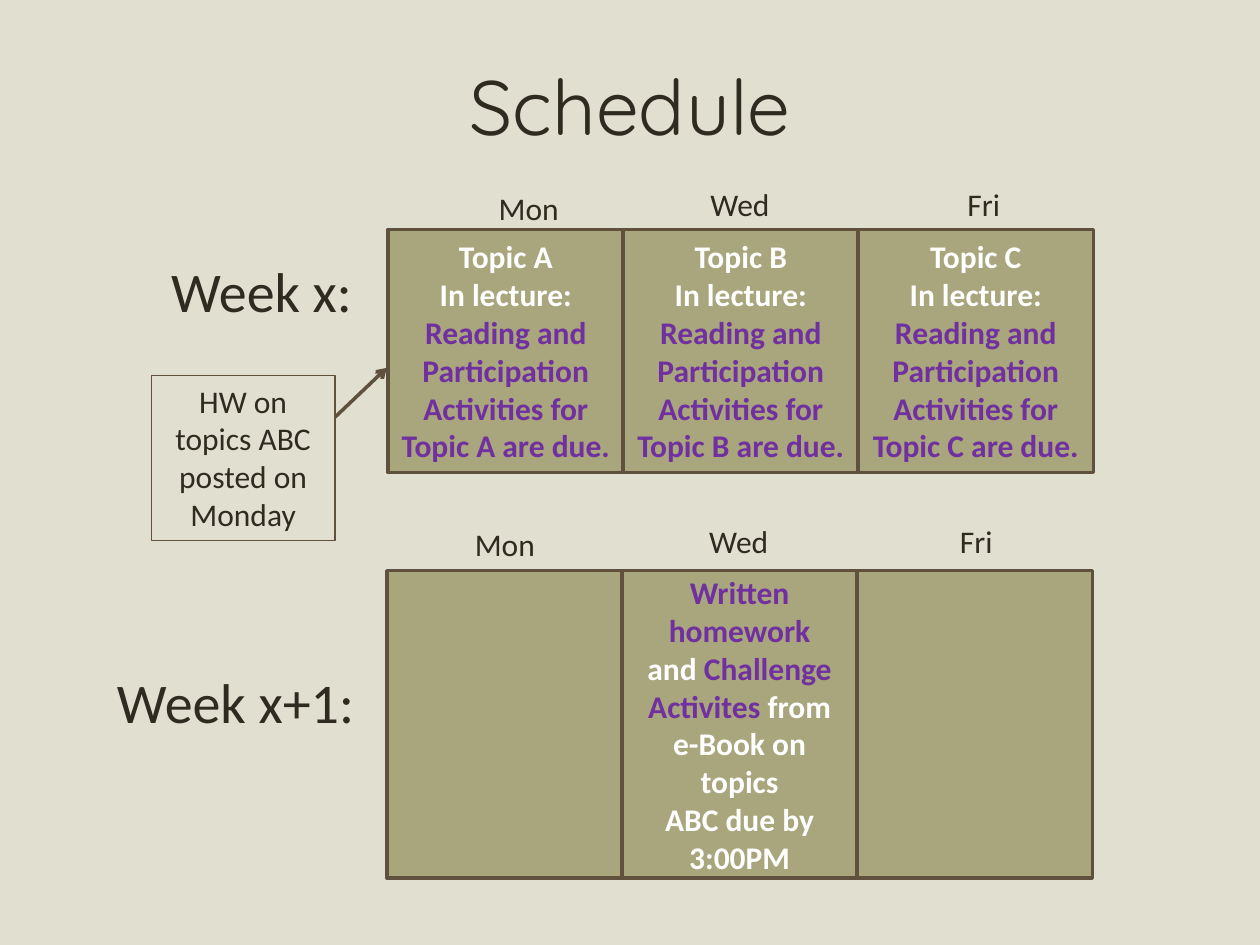
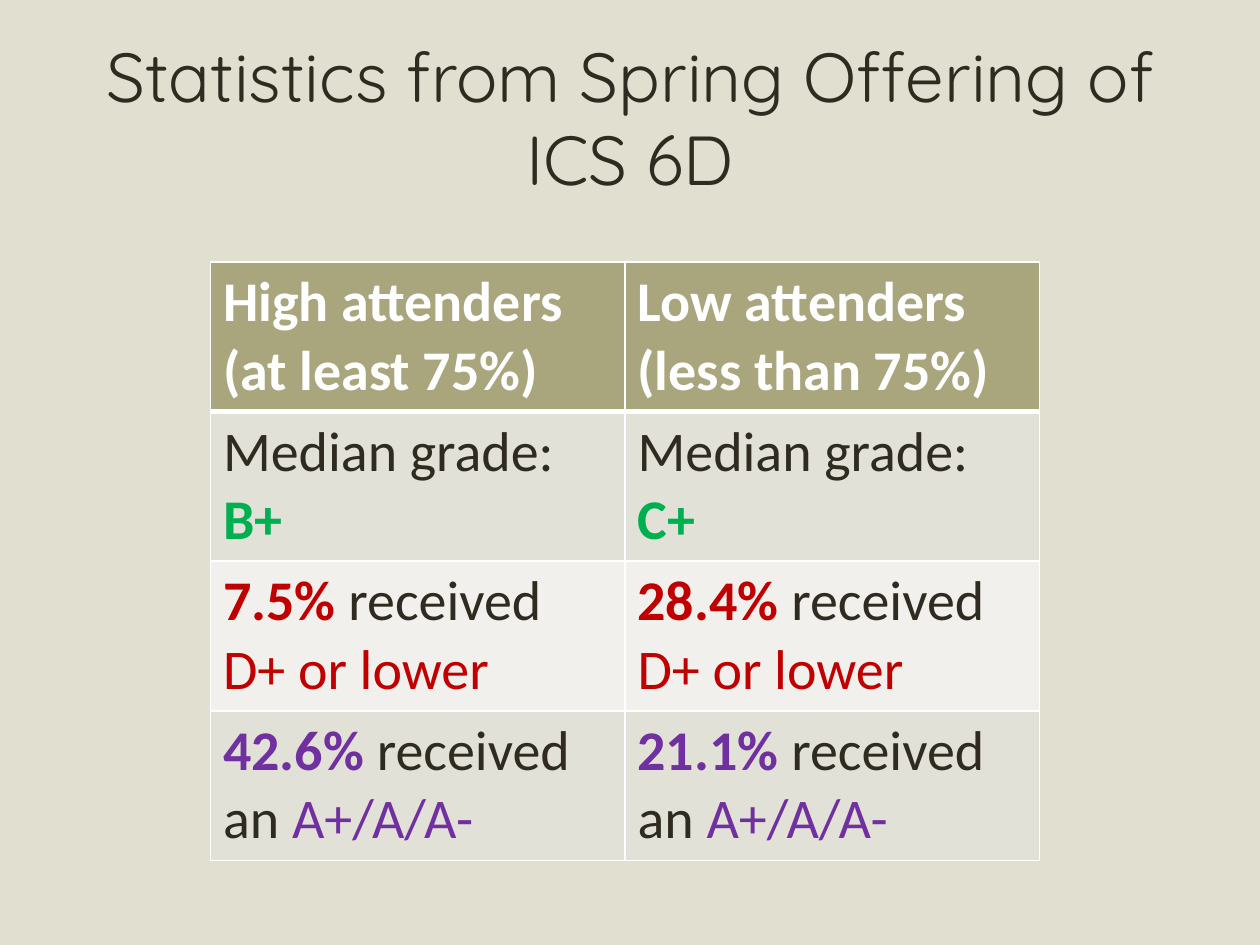
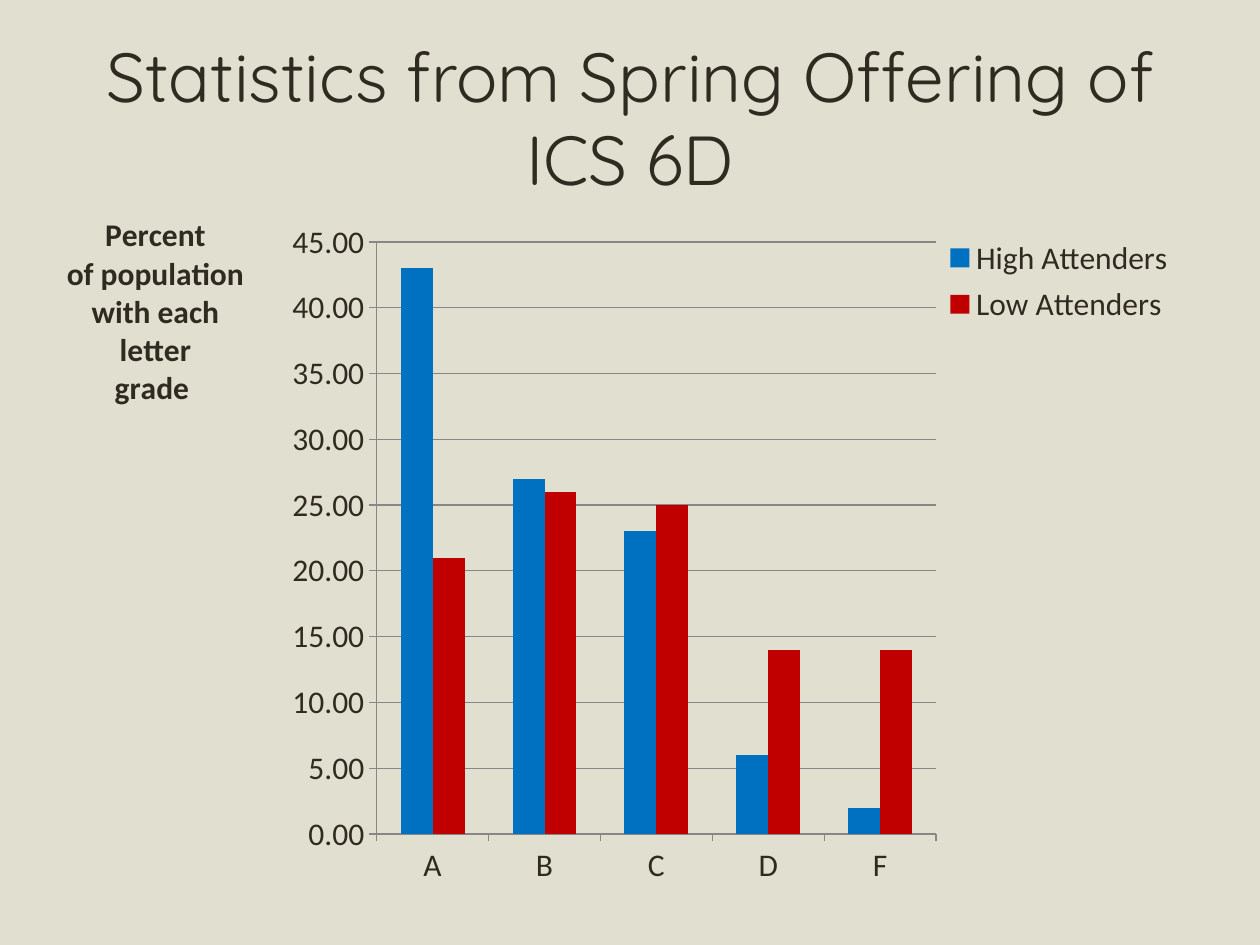
from dataclasses import dataclass
from typing import NamedTuple

from lxml.etree import SubElement
from pptx import Presentation
from pptx.chart.data import CategoryChartData
from pptx.dml.color import RGBColor
from pptx.enum.chart import XL_CHART_TYPE as ChartType
from pptx.enum.chart import XL_LEGEND_POSITION as LegendPosition
from pptx.enum.chart import XL_TICK_MARK as TickMark
from pptx.enum.shapes import MSO_CONNECTOR as ConnectorType
from pptx.enum.shapes import MSO_SHAPE as ShapeType
from pptx.enum.text import MSO_ANCHOR as Anchor
from pptx.enum.text import MSO_AUTO_SIZE as AutoSize
from pptx.enum.text import PP_ALIGN as Align
from pptx.oxml import parse_xml
from pptx.oxml.ns import nsdecls, qn
from pptx.oxml.xmlchemy import BaseOxmlElement
from pptx.slide import Slide
from pptx.table import _Cell as Cell
from pptx.text.text import Font, TextFrame
from pptx.util import Inches, Pt


@dataclass(frozen=True)
class Theme:
    background: str = "E0DFD0"
    ink: str = "2F2B20"
    olive: str = "A9A57C"
    brown: str = "5F513E"
    white: str = "FFFFFF"
    purple: str = "7030A0"
    green: str = "00B050"
    red: str = "C00000"
    blue: str = "0070C0"
    gray: str = "878787"
    band_dark: str = "E2E1D7"
    band_light: str = "F1F0EC"
    title_font: str = "Quicksand"
    body_font: str = "Calibri"
    title_size: float = 44
    long_title_size: float = 39.6
    large_size: float = 32
    body_size: float = 18


THEME = Theme()


class Span(NamedTuple):
    text: str
    color: str = THEME.ink
    bold: bool = False


class Box(NamedTuple):
    left: float
    top: float
    width: float
    height: float

    def lengths(self) -> list[Inches]:
        return [Inches(value) for value in self]


class Label(NamedTuple):
    text: str
    box: Box
    size: float = THEME.body_size


Paragraphs = list[list[Span]]


class Week(NamedTuple):
    first_day: Box
    span: float
    labels: list[Label]
    days: list[Paragraphs]


class Grades(NamedTuple):
    attenders: str
    color: str
    percents: list[int]


def rgb(color: str) -> RGBColor:
    return RGBColor.from_string(color)


def style_font(font: Font, size: float, color: str, bold: bool = False,
               name: str = THEME.body_font) -> None:
    font.name, font.size, font.bold = name, Pt(size), bold
    font.color.rgb = rgb(color)


def write(frame: TextFrame, paragraphs: Paragraphs, size: float,
          align: Align = Align.LEFT) -> None:
    for index, spans in enumerate(paragraphs):
        paragraph = frame.add_paragraph() if index else frame.paragraphs[0]
        paragraph.alignment = align
        for span in spans:
            run = paragraph.add_run()
            run.text = span.text
            style_font(run.font, size, span.color, span.bold)


def add_titled_slide(deck: Presentation, heading: str, top: float, size: float) -> Slide:
    slide = deck.slides.add_slide(deck.slide_layouts[5])
    title = slide.shapes.title
    title.left, title.top, title.width, title.height = Box(0.5, top, 9, 1.25).lengths()
    frame = title.text_frame
    frame.text = heading
    frame.auto_size = AutoSize.NONE
    frame.vertical_anchor = Anchor.MIDDLE
    frame.paragraphs[0].alignment = Align.CENTER
    style_font(frame.paragraphs[0].runs[0].font, size, THEME.ink, name=THEME.title_font)
    return slide


def add_label(slide: Slide, label: Label) -> None:
    frame = slide.shapes.add_textbox(*label.box.lengths()).text_frame
    frame.word_wrap = False
    frame.auto_size = AutoSize.SHAPE_TO_FIT_TEXT
    write(frame, [[Span(label.text)]], label.size)


def add_panel(slide: Slide, box: Box, paragraphs: Paragraphs, fill: str | None,
              line_width: float, anchor: Anchor) -> None:
    panel = slide.shapes.add_shape(ShapeType.RECTANGLE, *box.lengths())
    panel.shadow.inherit = False
    if fill:
        panel.fill.solid()
        panel.fill.fore_color.rgb = rgb(fill)
    else:
        panel.fill.background()
    panel.line.color.rgb = rgb(THEME.brown)
    panel.line.width = Pt(line_width)
    panel.text_frame.word_wrap = True
    panel.text_frame.vertical_anchor = anchor
    write(panel.text_frame, paragraphs, THEME.body_size, Align.CENTER)


def add_week(slide: Slide, week: Week) -> None:
    pitch = (week.span - week.first_day.width) / (len(week.days) - 1)
    for column, text in enumerate(week.days):
        box = week.first_day._replace(left=week.first_day.left + column * pitch)
        add_panel(slide, box, text, THEME.olive, 2, Anchor.MIDDLE)
    for label in week.labels:
        add_label(slide, label)


def add_arrow(slide: Slide, start: tuple[float, float], end: tuple[float, float]) -> None:
    arrow = slide.shapes.add_connector(
        ConnectorType.STRAIGHT, *[Inches(value) for value in start + end])
    arrow.line.color.rgb = rgb(THEME.brown)
    arrow.line.width = Pt(2)
    SubElement(arrow.get_or_add_ln(), qn("a:tailEnd"), type="arrow")
    SubElement(arrow.element.spPr, qn("a:effectLst"))


def lecture(topic: str) -> Paragraphs:
    return [
        [Span(f"Topic {topic}", THEME.white, True)],
        [Span("In lecture:", THEME.white, True)],
        [Span(f"Reading and Participation Activities for Topic {topic} are due.",
              THEME.purple, True)],
    ]


def build_schedule(deck: Presentation) -> None:
    slide = add_titled_slide(deck, "Schedule", 0.21, THEME.title_size)
    homework = [
        [Span("Written homework", THEME.purple, True)],
        [Span("and ", THEME.white, True),
         Span("Challenge Activites ", THEME.purple, True),
         Span("from e-Book on topics", THEME.white, True)],
        [Span("ABC due by 3:00PM", THEME.white, True)],
    ]
    weeks = [
        Week(Box(3.08, 1.82, 1.87, 1.93), 5.6,
             [Label("Week x:", Box(1.26, 1.99, 1.65, 0.64), THEME.large_size),
              Label("Mon", Box(3.86, 1.45, 0.68, 0.4)),
              Label("Wed", Box(5.54, 1.42, 0.68, 0.4)),
              Label("Fri", Box(7.58, 1.42, 0.46, 0.4))],
             [lecture(topic) for topic in "ABC"]),
        Week(Box(3.07, 4.53, 1.87, 2.44), 5.6,
             [Label("Week x+1:", Box(0.83, 5.25, 2.1, 0.64), THEME.large_size),
              Label("Mon", Box(3.67, 4.12, 0.68, 0.4)),
              Label("Wed", Box(5.53, 4.09, 0.68, 0.4)),
              Label("Fri", Box(7.52, 4.09, 0.46, 0.4))],
             [[], homework, []]),
    ]
    for week in weeks:
        add_week(slide, week)
    add_panel(slide, Box(1.2, 2.98, 1.46, 1.31),
              [[Span("HW on topics ABC posted on Monday")]], None, 0.75, Anchor.TOP)
    add_arrow(slide, (2.66, 3.31), (3.07, 2.92))


def set_borders(cell: Cell, top: float, bottom: float) -> None:
    properties = cell._tc.get_or_add_tcPr()
    widths = {"lnL": 1, "lnR": 1, "lnT": top, "lnB": bottom}
    for index, (side, width) in enumerate(widths.items()):
        properties.insert(index, parse_xml(
            f'<a:{side} {nsdecls("a")} w="{Pt(width)}"><a:solidFill>'
            f'<a:srgbClr val="{THEME.white}"/></a:solidFill></a:{side}>'))


def attendance_column(attenders: str, share: str, median: str, low: str,
                      high: str) -> list[Paragraphs]:
    return [
        [[Span(f"{attenders} attenders", THEME.white, True)],
         [Span(f"({share} 75%)", THEME.white, True)]],
        [[Span("Median grade: "), Span(median, THEME.green, True)]],
        [[Span(f"{low} ", THEME.red, True), Span("received "),
          Span("D+ or lower", THEME.red)]],
        [[Span(f"{high} ", THEME.purple, True), Span("received an "),
          Span("A+/A/A-", THEME.purple)]],
    ]


def build_statistics_table(deck: Presentation, heading: str) -> None:
    slide = add_titled_slide(deck, heading, 0.3, THEME.long_title_size)
    columns = [
        attendance_column("High", "at least", "B+", "7.5%", "42.6%"),
        attendance_column("Low", "less than", "C+", "28.4%", "21.1%"),
    ]
    fills = [THEME.olive, THEME.band_dark, THEME.band_light, THEME.band_dark]
    table = slide.shapes.add_table(
        len(fills), len(columns), *Box(1.67, 2.08, 6.58, 4.67).lengths()).table
    for column, texts in enumerate(columns):
        for row, (text, fill) in enumerate(zip(texts, fills)):
            cell = table.cell(row, column)
            cell.fill.solid()
            cell.fill.fore_color.rgb = rgb(fill)
            set_borders(cell, 3 if row == 1 else 1, 3 if row == 0 else 1)
            write(cell.text_frame, text, THEME.large_size)


def place_in_chart(part: BaseOxmlElement, area: Box, box: Box,
                   target: str | None = None, sized: bool = True) -> None:
    layout = part.find(qn("c:layout"))
    if layout is None:
        layout = parse_xml(f'<c:layout {nsdecls("c")}/>')
        overlay = part.find(qn("c:overlay"))
        if overlay is None:
            part.insert(0, layout)
        else:
            overlay.addprevious(layout)
    manual = SubElement(layout, qn("c:manualLayout"))
    if target:
        SubElement(manual, qn("c:layoutTarget"), val=target)
    for key in ("x", "y"):
        SubElement(manual, qn(f"c:{key}Mode"), val="edge")
    fractions = {"x": (box.left - area.left) / area.width,
                 "y": (box.top - area.top) / area.height}
    if sized:
        fractions |= {"w": box.width / area.width, "h": box.height / area.height}
    for key, fraction in fractions.items():
        SubElement(manual, qn(f"c:{key}"), val=f"{fraction:.4f}")


def build_statistics_chart(deck: Presentation, heading: str) -> None:
    slide = add_titled_slide(deck, heading, 0.3, THEME.long_title_size)
    groups = [
        Grades("High Attenders", THEME.blue, [43, 27, 23, 6, 2]),
        Grades("Low Attenders", THEME.red, [21, 26, 25, 14, 14]),
    ]
    data = CategoryChartData(number_format="0.00")
    data.categories = list("ABCDF")
    for group in groups:
        data.add_series(group.attenders, group.percents)
    area = Box(0.5, 1.67, 9.08, 5.47)
    chart = slide.shapes.add_chart(
        ChartType.COLUMN_CLUSTERED, *area.lengths(), data).chart
    style_font(chart.font, THEME.body_size, THEME.ink)
    chart.has_title = False

    plot = chart.plots[0]
    plot.gap_width, plot.overlap = 150, 0
    plot.vary_by_categories = False
    for series, group in zip(plot.series, groups):
        series.format.fill.solid()
        series.format.fill.fore_color.rgb = rgb(group.color)
        series.invert_if_negative = False

    percents = chart.value_axis
    percents.minimum_scale, percents.maximum_scale, percents.major_unit = 0, 45, 5
    percents.has_major_gridlines = True
    percents.tick_labels.number_format = "0.00"
    percents.tick_labels.number_format_is_linked = False
    for axis in (percents, chart.category_axis):
        axis.major_tick_mark = TickMark.OUTSIDE
        axis.format.line.color.rgb = rgb(THEME.gray)
    percents.major_gridlines.format.line.color.rgb = rgb(THEME.gray)

    percents.has_title = True
    caption = percents.axis_title.text_frame
    caption.text = "Percent\nof population\nwith each\nletter\ngrade "
    for paragraph in caption.paragraphs:
        paragraph.alignment = Align.CENTER
        for run in paragraph.runs:
            style_font(run.font, THEME.body_size, THEME.ink, True)
    caption_body = percents.axis_title.element.xpath("c:tx/c:rich/a:bodyPr")[0]
    caption_body.set("rot", "0")
    caption_body.set("vert", "horz")

    chart.has_legend = True
    chart.legend.position = LegendPosition.RIGHT
    chart.legend.include_in_layout = False
    place_in_chart(percents.axis_title.element, area,
                   Box(0.5, 1.67, 1.5, 1.5), sized=False)
    place_in_chart(chart.element.xpath("c:chart/c:legend")[0], area,
                   Box(7.45, 1.83, 1.91, 0.8))
    place_in_chart(chart.element.xpath("c:chart/c:plotArea")[0], area,
                   Box(2.99, 1.92, 4.44, 4.7), "inner")


def main() -> None:
    deck = Presentation()
    deck.slide_width, deck.slide_height = Inches(10), Inches(7.5)
    backdrop = deck.slide_master.background.fill
    backdrop.solid()
    backdrop.fore_color.rgb = rgb(THEME.background)
    statistics = "Statistics from Spring Offering of ICS 6D"
    build_schedule(deck)
    build_statistics_table(deck, statistics)
    build_statistics_chart(deck, statistics)
    deck.save("out.pptx")


if __name__ == "__main__":
    main()
